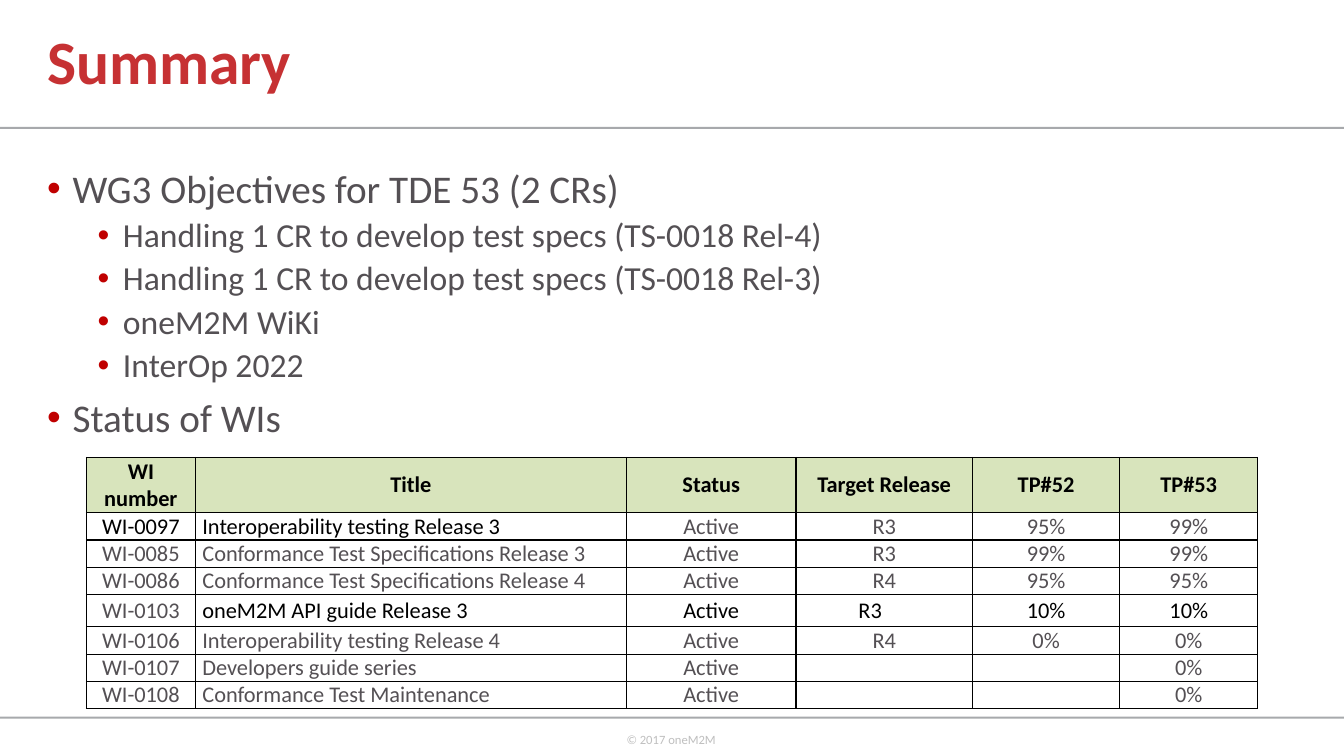
from lxml.etree import SubElement
from pptx import Presentation
from pptx.dml.color import RGBColor
from pptx.enum.shapes import MSO_SHAPE
from pptx.enum.text import MSO_ANCHOR, PP_ALIGN
from pptx.oxml.ns import qn
from pptx.util import Cm, Pt

# Content
TITLE = "Summary"
FOOTER = "© 2017 oneM2M"
BULLETS = [  # level, text
    (0, "WG3 Objectives for TDE 53 (2 CRs)"),
    (1, "Handling 1 CR to develop test specs (TS-0018 Rel-4)"),
    (1, "Handling 1 CR to develop test specs (TS-0018 Rel-3)"),
    (1, "oneM2M WiKi"),
    (1, "InterOp 2022"),
    (0, "Status of WIs"),
]
HEADER = ["WI number", "Title", "Status", "Target Release", "TP#52", "TP#53"]
WORK_ITEMS = [
    ["WI-0097", "Interoperability testing Release 3", "Active", "R3", "95%", "99%"],
    ["WI-0085", "Conformance Test Specifications Release 3", "Active", "R3", "99%", "99%"],
    ["WI-0086", "Conformance Test Specifications Release 4", "Active", "R4", "95%", "95%"],
    ["WI-0103", "oneM2M API guide Release 3", "Active", "R3", "10%", "10%"],
    ["WI-0106", "Interoperability testing Release 4", "Active", "R4", "0%", "0%"],
    ["WI-0107", "Developers guide series", "Active", "", "", "0%"],
    ["WI-0108", "Conformance Test Maintenance", "Active", "", "", "0%"],
]

# Style
FONT = "Calibri"
RED, BULLET_RED, GRAY, BLACK = "C63133", "C00000", "545054", "000000"
RULE_GRAY, FOOTER_GRAY, HEADER_GREEN, WHITE = "A7A9AC", "BFBFBF", "D8E4BC", "FFFFFF"
LEVELS = [  # text size, space before, left margin
    (28, 10, Cm(0.64)),
    (24, 5, Cm(1.91)),
]
HANGING = Cm(0.64)
COLUMN_WIDTHS = [2.74, 10.87, 4.27, 4.45, 3.71, 3.48]
HEADER_HEIGHT, ROW_HEIGHT, TALL_HEIGHT = 1.39, 0.69, 0.81
TITLE_COLUMN, RELEASE_COLUMN = 1, 3
TALL_ITEM = "WI-0103"
BLACK_COLUMNS = {"WI-0097": {0, 1}, TALL_ITEM: {1, 2, 3, 4, 5}}
CELL_SIZE = 16


def rgb(value):
    return RGBColor.from_string(value)


def add_run(paragraph, text, size, color, bold=False):
    run = paragraph.add_run()
    run.text = text
    run.font.name = FONT
    run.font.size = Pt(size)
    run.font.bold = bold
    run.font.color.rgb = rgb(color)


def add_box(slide, left, top, width, height, wrap=True):
    shape = slide.shapes.add_textbox(Cm(left), Cm(top), Cm(width), Cm(height))
    shape.text_frame.word_wrap = wrap
    return shape.text_frame


def add_bullet(paragraph, left_margin):
    properties = paragraph._p.get_or_add_pPr()
    properties.set("marL", str(left_margin))
    properties.set("indent", str(-HANGING))
    color = SubElement(properties, qn("a:buClr"))
    SubElement(color, qn("a:srgbClr"), val=BULLET_RED)
    SubElement(properties, qn("a:buFont"), typeface="Arial")
    SubElement(properties, qn("a:buChar"), char="•")


def add_borders(cell):
    properties = cell._tc.get_or_add_tcPr()
    for side in ("a:lnL", "a:lnR", "a:lnT", "a:lnB"):
        line = SubElement(properties, qn(side), w=str(Pt(1)))
        fill = SubElement(line, qn("a:solidFill"))
        SubElement(fill, qn("a:srgbClr"), val=BLACK)


def fill_cell(cell, text, color, fill, bold, alignment):
    add_borders(cell)
    cell.fill.solid()
    cell.fill.fore_color.rgb = rgb(fill)
    cell.vertical_anchor = MSO_ANCHOR.MIDDLE
    cell.margin_left = cell.margin_right = Cm(0.18)
    cell.margin_top = cell.margin_bottom = 0
    paragraph = cell.text_frame.paragraphs[0]
    paragraph.alignment = alignment
    if text:
        add_run(paragraph, text, CELL_SIZE, color, bold)
    else:  # keeps an empty cell as low as its row
        SubElement(paragraph._p, qn("a:endParaRPr"), sz=str(CELL_SIZE * 100))


presentation = Presentation()
presentation.slide_width, presentation.slide_height = Cm(33.87), Cm(19.05)
slide = presentation.slides.add_slide(presentation.slide_layouts[6])

# Rules across the slide
for top in (3.2, 18.06):
    rule = slide.shapes.add_shape(
        MSO_SHAPE.RECTANGLE, 0, Cm(top), presentation.slide_width, Cm(0.05))
    rule.shadow.inherit = False
    rule.fill.solid()
    rule.fill.fore_color.rgb = rgb(RULE_GRAY)
    rule.line.fill.background()

# Footer
footer = add_box(slide, 15.54, 18.31, 2.79, 1.02, wrap=False)
add_run(footer.paragraphs[0], FOOTER, 9, FOOTER_GRAY)

# Title
title = add_box(slide, 0.94, 0, 21.82, 3.25)
title.vertical_anchor = MSO_ANCHOR.MIDDLE
title.paragraphs[0].line_spacing = 0.9
add_run(title.paragraphs[0], TITLE, 44, RED, bold=True)

# Bullets
body = add_box(slide, 0.94, 4.14, 29.21, 12.09)
for index, (level, text) in enumerate(BULLETS):
    size, space, left_margin = LEVELS[level]
    paragraph = body.add_paragraph() if index else body.paragraphs[0]
    add_bullet(paragraph, left_margin)
    paragraph.level = level
    paragraph.line_spacing = 0.9
    paragraph.space_before = Pt(space if index else 0)
    add_run(paragraph, text, size, GRAY)

# Work item table
heights = [HEADER_HEIGHT] + [
    TALL_HEIGHT if item[0] == TALL_ITEM else ROW_HEIGHT for item in WORK_ITEMS]
table = slide.shapes.add_table(
    len(heights), len(HEADER), Cm(2.18), Cm(11.53),
    Cm(sum(COLUMN_WIDTHS)), Cm(sum(heights))).table
table.horz_banding = False
for column, width in zip(table.columns, COLUMN_WIDTHS):
    column.width = Cm(width)
for row, height in zip(table.rows, heights):
    row.height = Cm(height)

for column, text in enumerate(HEADER):
    fill_cell(table.cell(0, column), text, BLACK, HEADER_GREEN, True, PP_ALIGN.CENTER)
for row, item in enumerate(WORK_ITEMS, start=1):
    for column, text in enumerate(item):
        color = BLACK if column in BLACK_COLUMNS.get(item[0], ()) else GRAY
        alignment = PP_ALIGN.LEFT if column == TITLE_COLUMN else PP_ALIGN.CENTER
        fill_cell(table.cell(row, column), text, color, WHITE, False, alignment)
    if item[0] == TALL_ITEM:  # its release stands left of the centre
        table.cell(row, RELEASE_COLUMN).margin_right = Cm(0.89)

presentation.save("out.pptx")
